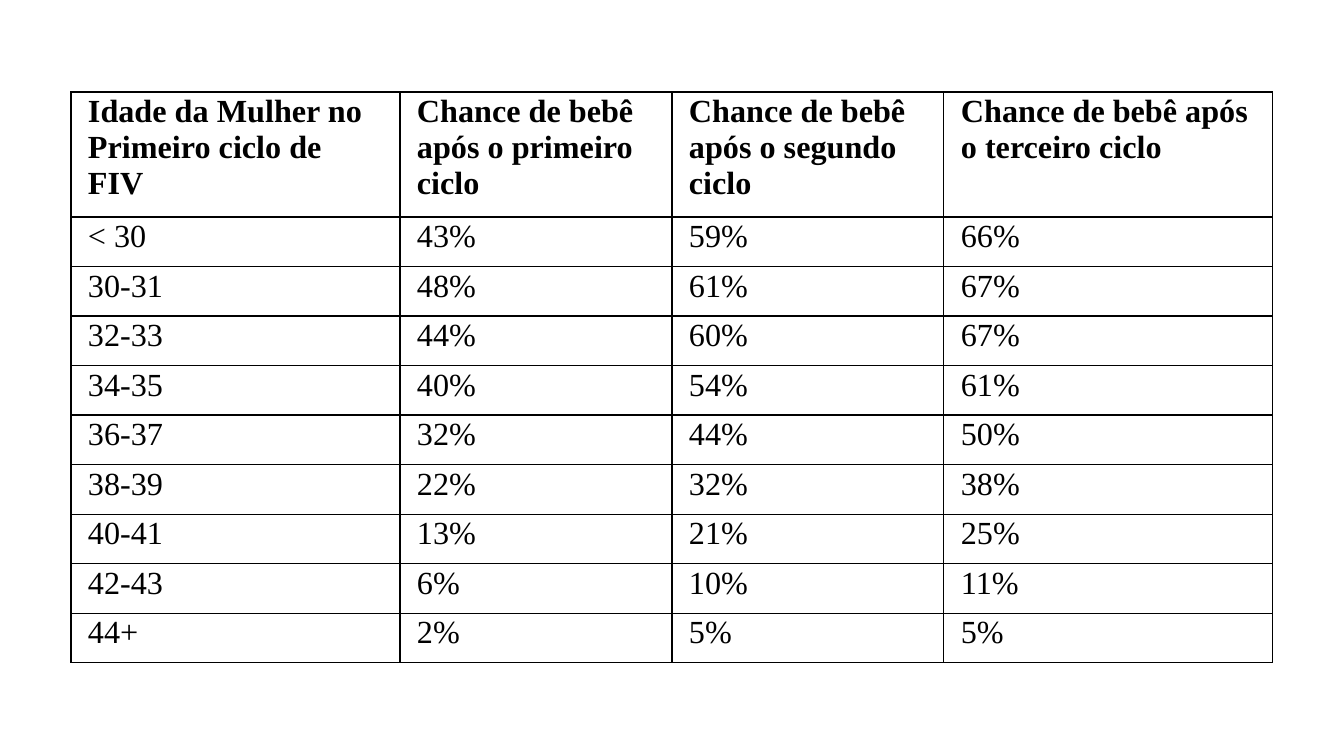
import pptx
import pptx.dml.color
import pptx.oxml
import pptx.oxml.ns
import pptx.util

HEADERS = [
    "Idade da Mulher no Primeiro ciclo de FIV",
    "Chance de bebê após o primeiro ciclo",
    "Chance de bebê após o segundo ciclo",
    "Chance de bebê após o terceiro ciclo",
]
CHANCES = [
    ("< 30", 43, 59, 66),
    ("30-31", 48, 61, 67),
    ("32-33", 44, 60, 67),
    ("34-35", 40, 54, 61),
    ("36-37", 32, 44, 50),
    ("38-39", 22, 32, 38),
    ("40-41", 13, 21, 25),
    ("42-43", 6, 10, 11),
    ("44+", 2, 5, 5),
]

PX_PER_INCH = 100.8
SLIDE_W, SLIDE_H = 1344, 756
TABLE_X, TABLE_Y, TABLE_H = 71, 92, 571
COLUMN_WIDTHS = [329, 272, 272, 329]
HEADER_H = 125
BORDER_PT = 1
BLACK = pptx.dml.color.RGBColor(0, 0, 0)


def px(n):
    return pptx.util.Emu(round(n * 914400 / PX_PER_INCH))


MARGINS = {
    "margin_left": px(17),
    "margin_top": px(2),
    "margin_right": px(17),
    "margin_bottom": px(0),
}
FONT = {"name": "Times New Roman", "size": pptx.util.Pt(23)}


def apply(target, values):
    for name, value in values.items():
        setattr(target, name, value)


def add_borders(cell):
    tcPr = cell._tc.get_or_add_tcPr()
    for side in ("lnL", "lnR", "lnT", "lnB"):
        tcPr.append(pptx.oxml.parse_xml(
            f'<a:{side} {pptx.oxml.ns.nsdecls("a")} w="{pptx.util.Pt(BORDER_PT)}">'
            f'<a:solidFill><a:srgbClr val="{BLACK}"/></a:solidFill></a:{side}>'
        ))


def fill_cell(cell, text, bold):
    apply(cell, MARGINS)
    add_borders(cell)
    cell.fill.background()
    p = cell.text_frame.paragraphs[0]
    p.space_after = pptx.util.Pt(15)
    r = p.add_run()
    r.text = text
    apply(r.font, FONT)
    r.font.bold = bold
    r.font.color.rgb = BLACK


def main():
    prs = pptx.Presentation()
    prs.slide_width, prs.slide_height = px(SLIDE_W), px(SLIDE_H)
    s = prs.slides.add_slide(prs.slide_layouts[6])

    rows = [HEADERS] + [
        [age] + [f"{chance}%" for chance in chances] for age, *chances in CHANCES
    ]
    table = s.shapes.add_table(
        len(rows), len(HEADERS),
        px(TABLE_X), px(TABLE_Y), px(sum(COLUMN_WIDTHS)), px(TABLE_H),
    ).table
    apply(table, {"first_row": False, "horz_banding": False})
    for column, width in zip(table.columns, COLUMN_WIDTHS):
        column.width = px(width)

    body_h = (TABLE_H - HEADER_H) / len(CHANCES)
    for i, texts in enumerate(rows):
        table.rows[i].height = px(body_h if i else HEADER_H)
        for j, text in enumerate(texts):
            fill_cell(table.cell(i, j), text, bold=i == 0)

    prs.save("out.pptx")


if __name__ == "__main__":
    main()
